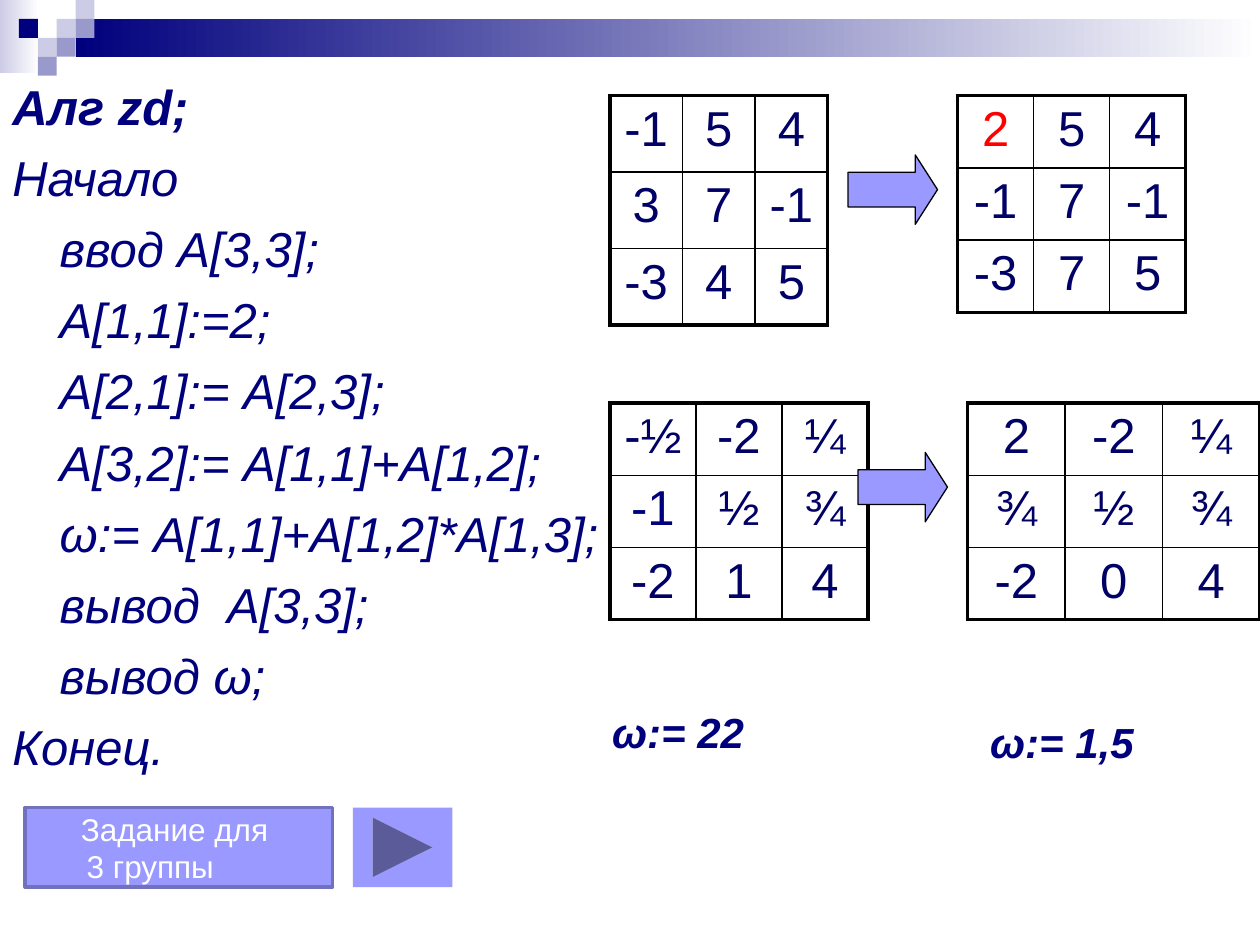
from dataclasses import dataclass

from lxml import etree
from pptx import Presentation
from pptx.dml.color import RGBColor
from pptx.enum.shapes import MSO_SHAPE
from pptx.enum.text import MSO_ANCHOR, PP_ALIGN
from pptx.oxml.ns import qn
from pptx.util import Pt

RECTANGLE = MSO_SHAPE.RECTANGLE
RIGHT_ARROW = MSO_SHAPE.RIGHT_ARROW
NEXT_BUTTON = MSO_SHAPE.ACTION_BUTTON_FORWARD_OR_NEXT
PROCESS = MSO_SHAPE.FLOWCHART_PROCESS
CENTER = PP_ALIGN.CENTER
LEFT = PP_ALIGN.LEFT
TOP = MSO_ANCHOR.TOP
MIDDLE = MSO_ANCHOR.MIDDLE


@dataclass(frozen=True)
class Theme:
    font: str = "Arial"
    navy: str = "00007D"
    cell_text: str = "000066"
    changed: str = "FF0000"
    pale: str = "CCCCE6"
    medium: str = "9999CC"
    accent: str = "9999FF"
    accent_edge: str = "7171BD"
    black: str = "000000"
    white: str = "FFFFFF"
    code_size: float = 28
    result_size: float = 24
    button_size: float = 18


THEME = Theme()
SQUARE = 10.8
SQUARES = [
    (3, 1, THEME.pale), (4, 0, THEME.pale), (4, 1, THEME.medium),
    (2, 2, THEME.pale), (1, 1, THEME.navy), (3, 2, THEME.medium),
    (2, 3, THEME.medium),
]
ALGORITHM = [
    ("Алг zd;", 0), ("Начало", 0), ("ввод А[3,3];", 27), ("А[1,1]:=2;", 27),
    ("А[2,1]:= А[2,3];", 27), ("А[3,2]:= А[1,1]+А[1,2];", 27),
    ("ω:= А[1,1]+А[1,2]*А[1,3];", 27), ("вывод  А[3,3];", 27),
    ("вывод ω;", 27), ("Конец.", 0),
]
MATRICES = [
    ((348.5, 54.7, 124.5, 131), ["-1 5 4", "3 7 -1", "-3 4 5"], {}),
    ((547.2, 54.7, 130.3, 123.8), ["2 5 4", "-1 7 -1", "-3 7 5"],
     {(0, 0): THEME.changed}),
    ((348.5, 230.4, 147.6, 123.8), ["-½ -2 ¼", "-1 ½ ¾", "-2 1 4"],
     {(1, 0): THEME.navy}),
    ((553, 230.4, 167, 123.8), ["2 -2 ¼", "¾ ½ ¾", "-2 0 4"], {}),
]
ARROWS = [(484.6, 88.5, 51.1, 39.7), (490.3, 258.5, 51.1, 39.7)]
RESULTS = [("ω:= 22", (342.7, 400.3, 92, 36)), ("ω:= 1,5", (558.7, 406, 130, 36))]


def place(box):
    return [Pt(length) for length in box]


def apply(target, formats):
    for name, value in formats.items():
        setattr(target, name, value)


def write(paragraph, text, size, color, align=LEFT, bold=False, italic=False):
    paragraph.add_run().text = text
    paragraph.alignment = align
    apply(paragraph.font, {"name": THEME.font, "size": Pt(size),
                           "bold": bold, "italic": italic})
    paragraph.font.color.rgb = RGBColor.from_string(color)


def add_shape(slide, kind, box, fill, line=None, line_width=0.75):
    shape = slide.shapes.add_shape(kind, *place(box))
    shape.shadow.inherit = False
    shape.fill.solid()
    shape.fill.fore_color.rgb = RGBColor.from_string(fill)
    if line:
        shape.line.color.rgb = RGBColor.from_string(line)
        shape.line.width = Pt(line_width)
    else:
        shape.line.fill.background()
    return shape


def add_fade(slide, box, start):
    shape = add_shape(slide, RECTANGLE, box, start)
    shape.fill.gradient()
    shape.fill.gradient_angle = 0
    for stop, color in zip(shape.fill.gradient_stops, (start, THEME.white)):
        stop.color.rgb = RGBColor.from_string(color)


def add_text_box(slide, box):
    frame = slide.shapes.add_textbox(*place(box)).text_frame
    apply(frame, {"word_wrap": True, "vertical_anchor": TOP})
    return frame


def add_algorithm(slide):
    frame = add_text_box(slide, (0, 37.4, 354.2, 424.8))
    frame.margin_top = Pt(6.4)
    for index, (text, indent) in enumerate(ALGORITHM):
        paragraph = frame.add_paragraph() if index else frame.paragraphs[0]
        paragraph._p.get_or_add_pPr().set("marL", str(Pt(indent)))
        if index:
            paragraph.space_before = Pt(7)
        write(paragraph, text, THEME.code_size, THEME.navy,
              bold=index == 0, italic=True)


def set_borders(cell, widths):
    properties = cell._tc.get_or_add_tcPr()
    for position, (side, width) in enumerate(widths.items()):
        line = etree.Element(qn(f"a:ln{side}"), w=str(Pt(width)))
        fill = etree.SubElement(line, qn("a:solidFill"))
        etree.SubElement(fill, qn("a:srgbClr"), val=THEME.black)
        properties.insert(position, line)


def add_matrix(slide, box, lines, colors):
    values = [line.split() for line in lines]
    count = len(values)
    table = slide.shapes.add_table(count, count, *place(box)).table
    apply(table, {"first_row": False, "horz_banding": False})
    for column in table.columns:
        column.width = Pt(box[2] / count)
    for row in table.rows:
        row.height = Pt(box[3] / count)
    for row, texts in enumerate(values):
        for column, text in enumerate(texts):
            cell = table.cell(row, column)
            cell.fill.background()
            edges = {"L": column == 0, "R": column == count - 1,
                     "T": row == 0, "B": row == count - 1}
            set_borders(cell, {side: 2.25 if outer else 1
                               for side, outer in edges.items()})
            write(cell.text_frame.paragraphs[0], text, THEME.code_size,
                  colors.get((row, column), THEME.cell_text), CENTER)


def add_task_button(slide):
    shape = add_shape(slide, PROCESS, (14.4, 461.5, 175.7, 45.4),
                      THEME.accent, THEME.accent_edge, 2)
    frame = shape.text_frame
    apply(frame, {"word_wrap": True, "vertical_anchor": MIDDLE})
    write(frame.paragraphs[0], "Задание для ", THEME.button_size, THEME.white, CENTER)
    second = frame.add_paragraph()
    second._p.get_or_add_pPr().set("indent", str(Pt(28)))
    write(second, "3 группы", THEME.button_size, THEME.white)


def main():
    presentation = Presentation()
    apply(presentation, {"slide_width": Pt(720), "slide_height": Pt(540)})
    slide = presentation.slides.add_slide(presentation.slide_layouts[6])

    add_fade(slide, (0, 0, 22.3, 41.8), THEME.pale)
    add_fade(slide, (43.2, SQUARE, 676.8, 21.6), THEME.navy)
    for column, row, color in SQUARES:
        add_shape(slide, RECTANGLE,
                  (column * SQUARE, row * SQUARE, SQUARE, SQUARE), color)

    add_algorithm(slide)
    for box, lines, colors in MATRICES:
        add_matrix(slide, box, lines, colors)
    for box in ARROWS:
        arrow = add_shape(slide, RIGHT_ARROW, box, THEME.accent, THEME.black)
        arrow.adjustments[1] = 0.32
    for text, box in RESULTS:
        write(add_text_box(slide, box).paragraphs[0], text, THEME.result_size,
              THEME.navy, bold=True, italic=True)
    add_shape(slide, NEXT_BUTTON, (201.6, 461.5, 56.9, 45.4), THEME.accent)
    add_task_button(slide)
    presentation.save("out.pptx")


if __name__ == "__main__":
    main()
